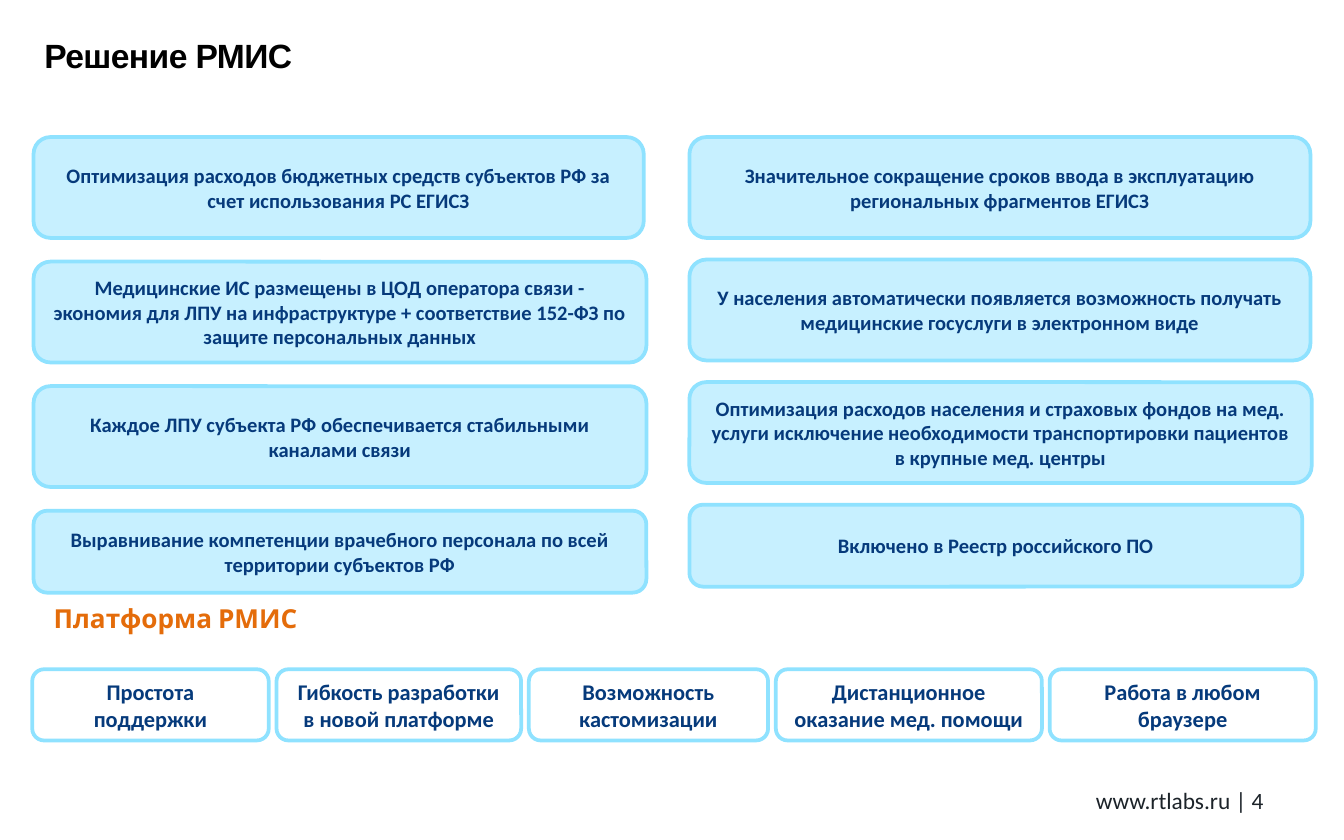
from dataclasses import dataclass

import pptx
import pptx.dml.color
import pptx.enum.shapes
import pptx.enum.text
import pptx.util

ALIGN = pptx.enum.text.PP_ALIGN
ANCHOR = pptx.enum.text.MSO_ANCHOR
COLUMNS, ROWS = 100, 62.5  # grid of square cells over the slide


class Theme:
    card_fill = "C7F0FF"
    button_fill = "FFFFFF"
    border = "8FE2FF"
    border_width = 2
    title = {"name": "Arial", "size": 18, "bold": True, "color": "000000"}
    heading = {"name": "Cabin", "size": 14, "bold": True, "color": "E46C0A"}
    card = {"name": "Calibri", "size": 11, "bold": True, "color": "063A7B"}
    button = {**card, "size": 12}
    footer = {"name": "Calibri", "size": 12.5, "bold": False, "color": "1C2329"}


@dataclass
class Box:
    """An area in grid columns and rows."""
    left: float
    top: float
    width: float
    height: float


# Each card: text and width in columns
LEFT_CARDS = [
    ("Оптимизация расходов бюджетных средств субъектов РФ за счет использования РС ЕГИСЗ", 45.4),
    ("Медицинские ИС размещены в ЦОД оператора связи - экономия для ЛПУ "
     "на инфраструктуре + соответствие 152-ФЗ по защите персональных данных", 45.6),
    ("Каждое ЛПУ субъекта РФ обеспечивается стабильными каналами связи", 45.6),
    ("Выравнивание компетенции врачебного персонала по всей территории субъектов РФ", 45.6),
]
RIGHT_CARDS = [
    ("Значительное сокращение сроков ввода в эксплуатацию региональных фрагментов ЕГИСЗ", 46.2),
    ("У населения автоматически появляется возможность получать "
     "медицинские госуслуги в электронном виде", 46.2),
    ("Оптимизация расходов населения и страховых фондов на мед. услуги исключение "
     "необходимости транспортировки пациентов в крупные мед. центры", 46.3),
    ("Включено в Реестр российского ПО", 45.6),
]
PLATFORM_BUTTONS = [
    ("Простота поддержки", 17.6),
    ("Гибкость разработки в новой платформе", 18.2),
    ("Возможность кастомизации", 17.8),
    ("Дистанционное оказание мед. помощи", 19.8),
    ("Работа в любом браузере", 19.8),
]

presentation = pptx.Presentation()
presentation.slide_width = pptx.util.Inches(10)
presentation.slide_height = pptx.util.Inches(6.25)


def to_lengths(box):
    column = presentation.slide_width / COLUMNS
    row = presentation.slide_height / ROWS
    return [round(value) for value in
            (box.left * column, box.top * row, box.width * column, box.height * row)]


def write_text(shape, text, style, alignment, anchor=ANCHOR.MIDDLE, margin=None):
    frame = shape.text_frame
    settings = {"word_wrap": True, "auto_size": pptx.enum.text.MSO_AUTO_SIZE.NONE,
                "vertical_anchor": anchor}
    if margin is not None:
        settings.update({f"margin_{side}": margin
                         for side in ("left", "top", "right", "bottom")})
    for name, value in settings.items():
        setattr(frame, name, value)
    paragraph = frame.paragraphs[0]
    paragraph.alignment = alignment
    run = paragraph.add_run()
    run.text = text
    font_values = {"name": style["name"], "bold": style["bold"],
                   "size": pptx.util.Pt(style["size"])}
    for name, value in font_values.items():
        setattr(run.font, name, value)
    run.font.color.rgb = pptx.dml.color.RGBColor.from_string(style["color"])
    return run


def add_panel(slide, box, text, fill, style):
    shape = slide.shapes.add_shape(
        pptx.enum.shapes.MSO_SHAPE.ROUNDED_RECTANGLE, *to_lengths(box))
    shape.shadow.inherit = False
    shape.fill.solid()
    shape.fill.fore_color.rgb = pptx.dml.color.RGBColor.from_string(fill)
    shape.line.color.rgb = pptx.dml.color.RGBColor.from_string(Theme.border)
    shape.line.width = pptx.util.Pt(Theme.border_width)
    write_text(shape, text, style, ALIGN.CENTER)


def add_title(slide, box, text):
    title = slide.shapes.title
    for name, value in zip(("left", "top", "width", "height"), to_lengths(box)):
        setattr(title, name, value)
    run = write_text(title, text, Theme.title, ALIGN.LEFT, ANCHOR.TOP, margin=0)
    run.font._element.set("spc", "-30")


def add_label(slide, box, text, style, alignment, margin=None):
    write_text(slide.shapes.add_textbox(*to_lengths(box)), text, style, alignment,
               margin=margin)


def add_card_column(slide, box, cards):
    """Stack cards at an even pitch; the last one is shorter."""
    card_height, last_height = 7.5, 6.1
    last = len(cards) - 1
    pitch = (box.height - last_height) / last
    for index, (text, width) in enumerate(cards):
        height = last_height if index == last else card_height
        card_box = Box(box.left, box.top + index * pitch, width, height)
        add_panel(slide, card_box, text, Theme.card_fill, Theme.card)


def add_button_row(slide, box, buttons):
    """Place buttons side by side, sharing the spare width as equal gaps."""
    gap = (box.width - sum(width for _, width in buttons)) / (len(buttons) - 1)
    left = box.left
    for text, width in buttons:
        add_panel(slide, Box(left, box.top, width, box.height), text,
                  Theme.button_fill, Theme.button)
        left += width + gap


def build_solution_slide():
    slide = presentation.slides.add_slide(presentation.slide_layouts[5])
    # Title
    add_title(slide, Box(3.3, 2.6, 77.1, 7.5), "Решение РМИС")
    # Two columns of benefits
    add_card_column(slide, Box(2.5, 10.2, 45.6, 33.9), LEFT_CARDS)
    add_card_column(slide, Box(51.3, 10.2, 46.3, 33.45), RIGHT_CARDS)
    # Platform features
    add_label(slide, Box(4, 44.1, 93.3, 3.8), "Платформа РМИС",
              Theme.heading, ALIGN.LEFT, margin=0)
    add_button_row(slide, Box(2.4, 49.8, 95.5, 5.3), PLATFORM_BUTTONS)
    # Footer
    add_label(slide, Box(74.4, 57.9, 20.6, 3.3), "www.rtlabs.ru | 4",
              Theme.footer, ALIGN.RIGHT)


if __name__ == "__main__":
    build_solution_slide()
    presentation.save("out.pptx")
